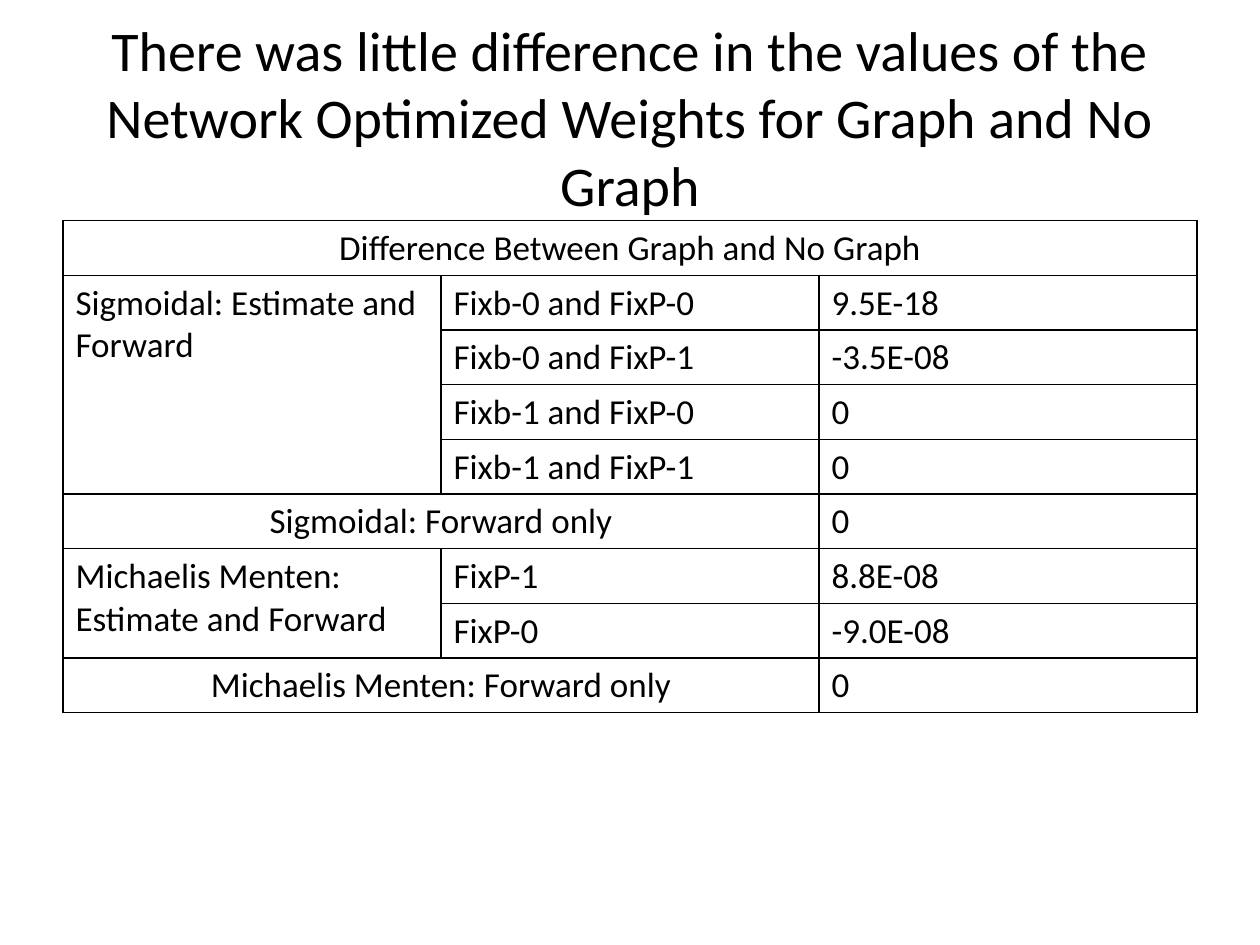
from lxml import etree
from pptx import Presentation
from pptx.dml.color import RGBColor
from pptx.enum.text import MSO_ANCHOR, PP_ALIGN
from pptx.oxml.ns import qn
from pptx.util import Cm, Pt

LEFT, CENTER = PP_ALIGN.LEFT, PP_ALIGN.CENTER
MIDDLE = MSO_ANCHOR.MIDDLE
BLACK = "000000"
FONT = "Calibri"

TITLE = ("There was little difference in the values of the "
         "Network Optimized Weights for Graph and No Graph")
HEADING = "Difference Between Graph and No Graph"
# Each model has a list of (setting, difference); None means no setting column
MODELS = [
    ("Sigmoidal: Estimate and Forward", [
        ("Fixb-0 and FixP-0", "9.5E-18"),
        ("Fixb-0 and FixP-1", "-3.5E-08"),
        ("Fixb-1 and FixP-0", "0"),
        ("Fixb-1 and FixP-1", "0"),
    ]),
    ("Sigmoidal: Forward only", [(None, "0")]),
    ("Michaelis Menten: Estimate and Forward", [
        ("FixP-1", "8.8E-08"),
        ("FixP-0", "-9.0E-08"),
    ]),
    ("Michaelis Menten: Forward only", [(None, "0")]),
]


def rgb(value):
    return RGBColor.from_string(value)


def write(tf, text, size, align):
    p = tf.paragraphs[0]
    p.alignment = align
    r = p.add_run()
    r.text = text
    for name, value in {"name": FONT, "size": Pt(size)}.items():
        setattr(r.font, name, value)
    r.font.color.rgb = rgb(BLACK)


def style_cell(cell):
    """Give the cell four thin black borders and no fill."""
    tc_pr = cell._tc.get_or_add_tcPr()
    for side in ("lnL", "lnR", "lnT", "lnB"):
        ln = etree.SubElement(tc_pr, qn(f"a:{side}"), w=str(Pt(1)))
        fill = etree.SubElement(ln, qn("a:solidFill"))
        etree.SubElement(fill, qn("a:srgbClr"), val=BLACK)
    cell.fill.background()


def add_title(s, left, top, width, height):
    tf = s.shapes.add_textbox(left, top, width, height).text_frame
    tf.word_wrap = True
    tf.vertical_anchor = MIDDLE
    write(tf, TITLE, 32, CENTER)


def add_difference_table(s, left, top, width, height):
    n_rows = 1 + sum(len(results) for _, results in MODELS)
    frame = s.shapes.add_table(n_rows, 3, left, top, width, height)
    table = frame.table
    table.first_row = table.horz_banding = False
    for row in table.rows:
        for cell in row.cells:
            style_cell(cell)

    def put(row, col, text, align=LEFT, last=None):
        cell = table.cell(row, col)
        if last:
            cell.merge(table.cell(*last))
        write(cell.text_frame, text, 20, align)

    put(0, 0, HEADING, CENTER, (0, 2))
    row = 1
    for model, results in MODELS:
        if results[0][0] is None:
            put(row, 0, model, CENTER, (row, 1))
        else:
            put(row, 0, model, LEFT, (row + len(results) - 1, 0))
        for setting, difference in results:
            if setting:
                put(row, 1, setting)
            put(row, 2, difference)
            row += 1


def main():
    prs = Presentation()
    prs.slide_width, prs.slide_height = Cm(25.4), Cm(19.05)
    s = prs.slides.add_slide(prs.slide_layouts[6])
    add_title(s, Cm(1.27), Cm(0.76), Cm(22.86), Cm(3.18))
    add_difference_table(s, Cm(1.27), Cm(4.45), Cm(22.86), Cm(9.9))
    prs.save("out.pptx")


if __name__ == "__main__":
    main()
